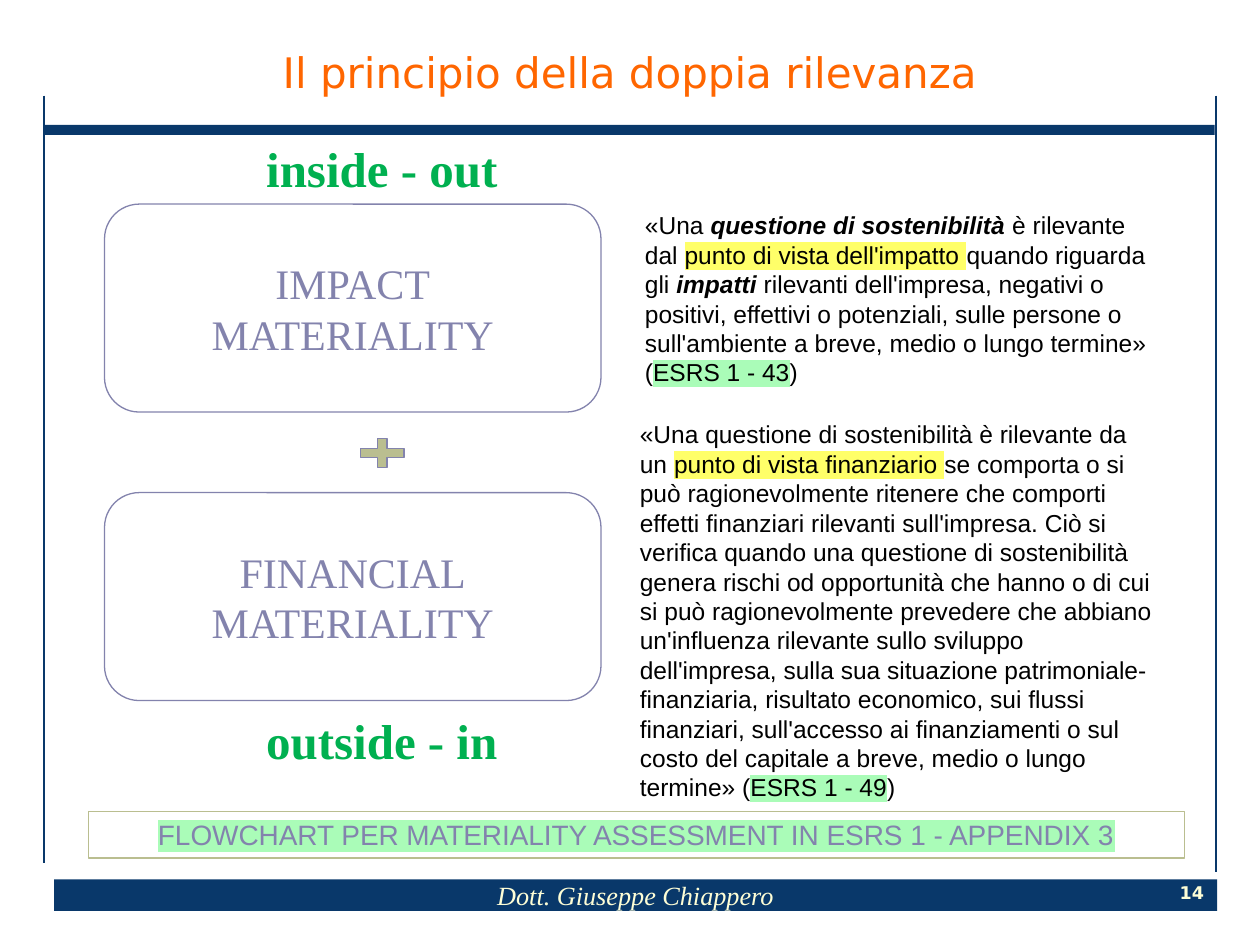
from dataclasses import dataclass
from typing import NamedTuple, Optional

from lxml.etree import SubElement
from pptx import Presentation
from pptx.dml.color import RGBColor
from pptx.enum.shapes import MSO_CONNECTOR as Connector, MSO_SHAPE as Shape
from pptx.enum.text import MSO_ANCHOR as Anchor, MSO_AUTO_SIZE as AutoSize, PP_ALIGN as Align
from pptx.oxml import parse_xml
from pptx.oxml.ns import nsdecls, qn
from pptx.util import Inches, Pt


@dataclass(frozen=True)
class Theme:
    navy: str = "09386A"
    cream: str = "FEFED6"
    orange: str = "FF6600"
    black: str = "000000"
    violet: str = "8383AD"
    olive: str = "BABE90"
    green: str = "00B050"
    yellow_outline: str = "E9E90A"
    yellow_mark: str = "FFFF69"
    green_mark: str = "AAFCB8"
    sans: str = "Arial"
    serif: str = "Times New Roman"
    display: str = "DejaVu Sans"
    number_size: int = 10
    body_size: int = 14
    author_size: int = 15
    flowchart_size: int = 16
    heading_size: int = 24
    direction_size: int = 28


class Box(NamedTuple):
    left: float
    top: float
    width: float
    height: float

    def lengths(self) -> list:
        return [Inches(value) for value in self]


class Span(NamedTuple):
    text: str
    strong: bool = False
    mark: Optional[str] = None


class Materiality(NamedTuple):
    heading: str
    top: float
    direction: str
    direction_top: float
    definition_box: Box
    definition: list


THEME = Theme()

MATERIALITIES = [
    Materiality("IMPACT\nMATERIALITY", 1.62, "inside - out", 1.05, Box(5.02, 1.62, 4.32, 1.51), [
        Span("«Una "),
        Span("questione di sostenibilità ", strong=True),
        Span("è rilevante dal "),
        Span("punto di vista dell'impatto ", mark=THEME.yellow_mark),
        Span("quando riguarda gli "),
        Span("impatti ", strong=True),
        Span("rilevanti dell'impresa, negativi o positivi, effettivi o potenziali, "
             "sulle persone o sull'ambiente a breve, medio o lungo termine» ("),
        Span("ESRS 1 - 43", mark=THEME.green_mark),
        Span(")"),
    ]),
    Materiality("FINANCIAL\nMATERIALITY", 3.91, "outside - in", 5.59, Box(4.98, 3.28, 4.32, 3.16), [
        Span("«Una questione di sostenibilità è rilevante da un "),
        Span("punto di vista finanziario ", mark=THEME.yellow_mark),
        Span("se comporta o si può ragionevolmente ritenere che comporti effetti finanziari "
             "rilevanti sull'impresa. Ciò si verifica quando una questione di sostenibilità "
             "genera rischi od opportunità che hanno o di cui si può ragionevolmente prevedere "
             "che abbiano un'influenza rilevante sullo sviluppo dell'impresa, sulla sua "
             "situazione patrimoniale-finanziaria, risultato economico, sui flussi finanziari, "
             "sull'accesso ai finanziamenti o sul costo del capitale a breve, medio o lungo "
             "termine» ("),
        Span("ESRS 1 - 49", mark=THEME.green_mark),
        Span(")"),
    ]),
]


def write(frame, text, *, size: int, font: str, color: str, bold=False, italic=False,
          mark=None, outline=None, align=Align.CENTER, anchor=Anchor.MIDDLE,
          wrap=True, grow=False) -> None:
    frame.word_wrap = wrap
    frame.auto_size = AutoSize.SHAPE_TO_FIT_TEXT if grow else AutoSize.NONE
    frame.vertical_anchor = anchor
    paragraph = frame.paragraphs[0]
    paragraph.alignment = align
    spans = [Span(text, mark=mark)] if isinstance(text, str) else text
    for span in spans:
        for index, line in enumerate(span.text.split("\n")):
            if index:
                paragraph.add_line_break()
            run = paragraph.add_run()
            run.text = line
            run.font.size = Pt(size)
            run.font.bold = bold or span.strong
            run.font.italic = italic or span.strong
            run.font.color.rgb = RGBColor.from_string(color)
            properties = run.font._element
            if span.mark:
                highlight = SubElement(properties, qn("a:highlight"))
                SubElement(highlight, qn("a:srgbClr"), val=span.mark)
            if outline:
                properties.insert(0, parse_xml(
                    f'<a:ln {nsdecls("a")} w="12700"><a:solidFill>'
                    f'<a:srgbClr val="{outline}"/></a:solidFill></a:ln>'))
            run.font.name = font


def add_block(slide, kind, box: Box, fill: Optional[str] = None, line: Optional[str] = None):
    block = slide.shapes.add_shape(kind, *box.lengths())
    block.shadow.inherit = False
    if fill:
        block.fill.solid()
        block.fill.fore_color.rgb = RGBColor.from_string(fill)
    else:
        block.fill.background()
    if line:
        block.line.color.rgb = RGBColor.from_string(line)
        block.line.width = Pt(0.75)
    else:
        block.line.fill.background()
    return block


def add_text(slide, box: Box, text, **style) -> None:
    write(slide.shapes.add_textbox(*box.lengths()).text_frame, text, **style)


def add_side_rule(slide, x: float, bottom: float) -> None:
    rule = slide.shapes.add_connector(
        Connector.STRAIGHT, Inches(x), Inches(0.76), Inches(x), Inches(bottom))
    rule.line.color.rgb = RGBColor.from_string(THEME.navy)
    rule.line.width = Pt(1)
    SubElement(rule._element.spPr, qn("a:effectLst"))


def add_frame(slide) -> None:
    add_block(slide, Shape.RECTANGLE, Box(0.35, 0.99, 9.29, 0.08), fill=THEME.navy)
    footer = add_block(slide, Shape.RECTANGLE, Box(0.43, 6.98, 9.23, 0.25), fill=THEME.navy)
    write(footer.text_frame, "Dott. Giuseppe Chiappero", size=THEME.author_size,
          font=THEME.serif, color=THEME.cream, italic=True)
    add_side_rule(slide, 0.35, 6.85)
    add_side_rule(slide, 9.65, 6.92)
    add_text(slide, Box(9.33, 6.98, 0.26, 0.2), "14", size=THEME.number_size,
             font=THEME.display, color=THEME.cream, bold=True, wrap=False)


def add_title(slide, text: str) -> None:
    title = slide.shapes.title
    title.left, title.top, title.width, title.height = Box(0.43, 0.13, 9.14, 0.87).lengths()
    write(title.text_frame, text, size=THEME.heading_size, font=THEME.display,
          color=THEME.orange)


def add_materiality(slide, item: Materiality) -> None:
    add_text(slide, item.definition_box, item.definition, size=THEME.body_size,
             font=THEME.sans, color=THEME.black, align=Align.LEFT, anchor=Anchor.TOP, grow=True)
    card = add_block(slide, Shape.ROUNDED_RECTANGLE, Box(0.83, item.top, 3.94, 1.65),
                     line=THEME.violet)
    write(card.text_frame, item.heading, size=THEME.heading_size, font=THEME.serif,
          color=THEME.violet, wrap=False)
    add_text(slide, Box(2, item.direction_top, 2.06, 0.57), item.direction,
             size=THEME.direction_size, font=THEME.serif, color=THEME.green, bold=True,
             outline=THEME.yellow_outline, anchor=Anchor.TOP, wrap=False, grow=True)


def main() -> None:
    deck = Presentation()
    deck.slide_width, deck.slide_height = Inches(10), Inches(7.5)
    slide = deck.slides.add_slide(deck.slide_layouts[5])
    add_frame(slide)
    add_title(slide, "Il principio della doppia rilevanza")
    for item in MATERIALITIES:
        add_materiality(slide, item)
    add_block(slide, Shape.MATH_PLUS, Box(2.8, 3.44, 0.47, 0.31),
              fill=THEME.olive, line=THEME.violet)
    flowchart = add_block(slide, Shape.RECTANGLE, Box(0.7, 6.44, 8.7, 0.37), line=THEME.olive)
    write(flowchart.text_frame, "FLOWCHART PER MATERIALITY ASSESSMENT IN ESRS 1 - APPENDIX 3",
          size=THEME.flowchart_size, font=THEME.sans, color=THEME.violet,
          mark=THEME.green_mark, anchor=Anchor.TOP, grow=True)
    deck.save("out.pptx")


if __name__ == "__main__":
    main()
